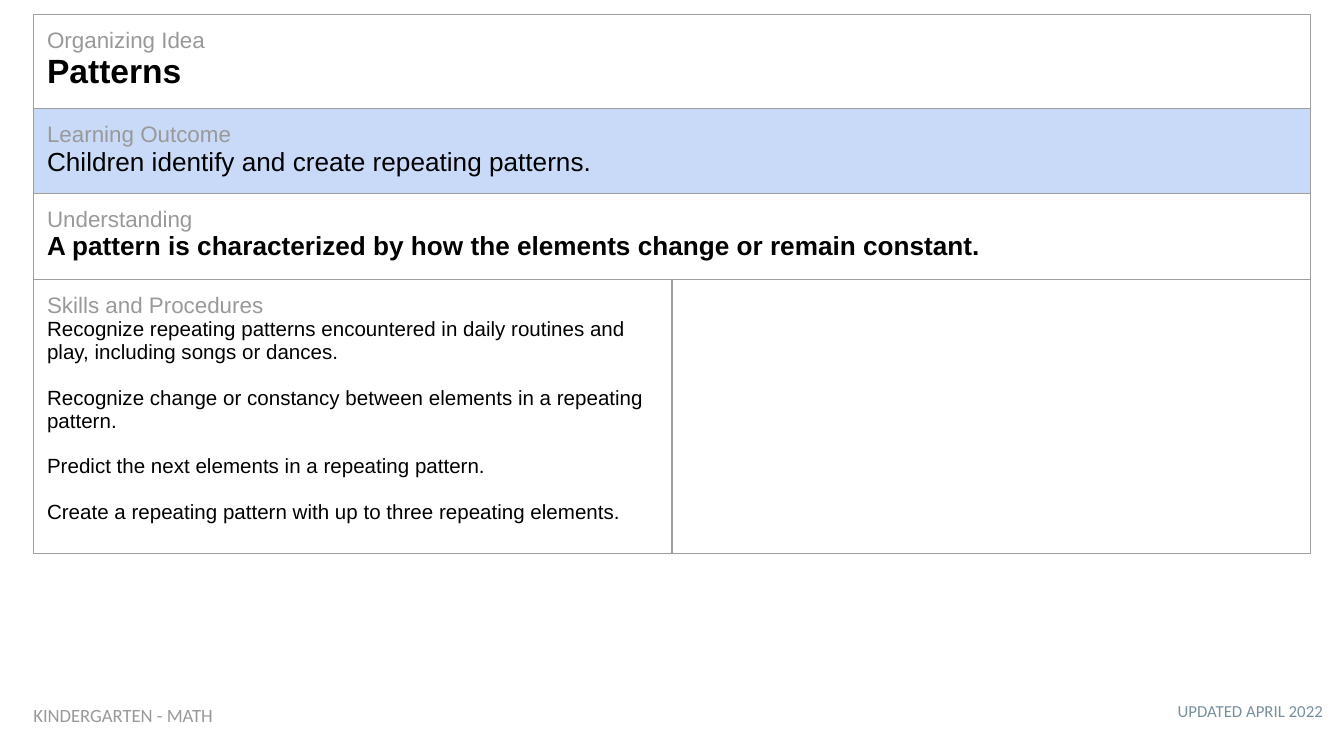
from lxml.etree import SubElement
from pptx import Presentation
from pptx.dml.color import RGBColor
from pptx.enum.text import MSO_AUTO_SIZE, PP_ALIGN
from pptx.oxml.ns import qn
from pptx.util import Inches, Pt

GREY, BLACK, BORDER = "999999", "000000", "9E9E9E"
SLIDE_WIDTH = 10
SLIDE_HEIGHT = SLIDE_WIDTH * 9 / 16
LABEL = {"size": 12, "color": GREY}
SKILL_GAP = 12.3

# (height, fill, label, label shares the paragraph, body lines, body format)
ROWS = [
    (0.7, None, "Organizing Idea", True, ["Patterns"],
     {"size": 18, "color": BLACK, "bold": True}),
    (0.63, "C9DAF8", "Learning Outcome", True,
     ["Children identify and create repeating patterns."],
     {"size": 14, "color": BLACK}),
    (0.64, None, "Understanding", False,
     ["A pattern is characterized by how the elements change or remain constant."],
     {"size": 14, "color": BLACK, "bold": True}),
    (2.04, None, "Skills and Procedures", False,
     ["Recognize repeating patterns encountered in daily routines and play, "
      "including songs or dances.",
      "Recognize change or constancy between elements in a repeating pattern.",
      "Predict the next elements in a repeating pattern.",
      "Create a repeating pattern with up to three repeating elements."],
     {"size": 11, "color": BLACK}),
]
COL_WIDTHS = [4.75, 4.75]
TABLE_LEFT, TABLE_TOP = 0.25, 0.11

# (text, box, alignment, format)
FOOTERS = [
    ("UPDATED APRIL 2022", (7.24, 5.14, 2.7, 0.35), PP_ALIGN.RIGHT,
     {"size": 9, "color": "78909C", "name": "Calibri"}),
    ("KINDERGARTEN - MATH", (0.15, 5.15, 3.01, 0.37), PP_ALIGN.LEFT,
     {"size": 10, "color": GREY, "name": "Calibri"}),
]


def rgb(value):
    return RGBColor.from_string(value)


def add_run(p, text, size, color, name="Arial", bold=False):
    r = p.add_run()
    r.text = text
    for key, value in {"size": Pt(size), "name": name, "bold": bold}.items():
        setattr(r.font, key, value)
    r.font.color.rgb = rgb(color)


def set_margins(target):
    for side in ("left", "top", "right", "bottom"):
        setattr(target, f"margin_{side}", Inches(0.1))


def style_cell(cell, fill):
    """Set margins, a thin border on every side, and the fill."""
    set_margins(cell)
    tc_pr = cell._tc.get_or_add_tcPr()
    for side in ("a:lnL", "a:lnR", "a:lnT", "a:lnB"):
        ln = SubElement(tc_pr, qn(side), w=str(Pt(0.75)))
        solid = SubElement(ln, qn("a:solidFill"))
        SubElement(solid, qn("a:srgbClr"), val=BORDER)
    if fill:
        cell.fill.solid()
        cell.fill.fore_color.rgb = rgb(fill)
    else:
        cell.fill.background()


def write_cell(tf, label, shared, lines, fmt):
    """Write the grey label, then the body after a line break or as paragraphs."""
    p = tf.paragraphs[0]
    add_run(p, label, **LABEL)
    for n, line in enumerate(lines):
        if shared:
            p.add_line_break()
        else:
            p = tf.add_paragraph()
        if n:
            p.space_before = Pt(SKILL_GAP)
        add_run(p, line, **fmt)


def add_outcome_table(slide):
    total = sum(row[0] for row in ROWS)
    table = slide.shapes.add_table(
        len(ROWS), len(COL_WIDTHS), Inches(TABLE_LEFT), Inches(TABLE_TOP),
        Inches(sum(COL_WIDTHS)), Inches(total)).table
    table.first_row = table.horz_banding = False
    for column, width in zip(table.columns, COL_WIDTHS):
        column.width = Inches(width)

    for i, (height, fill, *content) in enumerate(ROWS):
        table.rows[i].height = Inches(height)
        for cell in table.rows[i].cells:
            style_cell(cell, fill)
        first = table.cell(i, 0)
        if i < len(ROWS) - 1:
            first.merge(table.cell(i, 1))
        write_cell(first.text_frame, *content)


def add_footer(slide, text, box, align, fmt):
    tf = slide.shapes.add_textbox(*map(Inches, box)).text_frame
    tf.word_wrap = True
    tf.auto_size = MSO_AUTO_SIZE.SHAPE_TO_FIT_TEXT
    set_margins(tf)
    p = tf.paragraphs[0]
    p.alignment = align
    add_run(p, text, **fmt)


def main():
    prs = Presentation()
    prs.slide_width, prs.slide_height = Inches(SLIDE_WIDTH), Inches(SLIDE_HEIGHT)
    slide = prs.slides.add_slide(prs.slide_layouts[6])
    add_outcome_table(slide)
    for footer in FOOTERS:
        add_footer(slide, *footer)
    prs.save("out.pptx")


if __name__ == "__main__":
    main()
